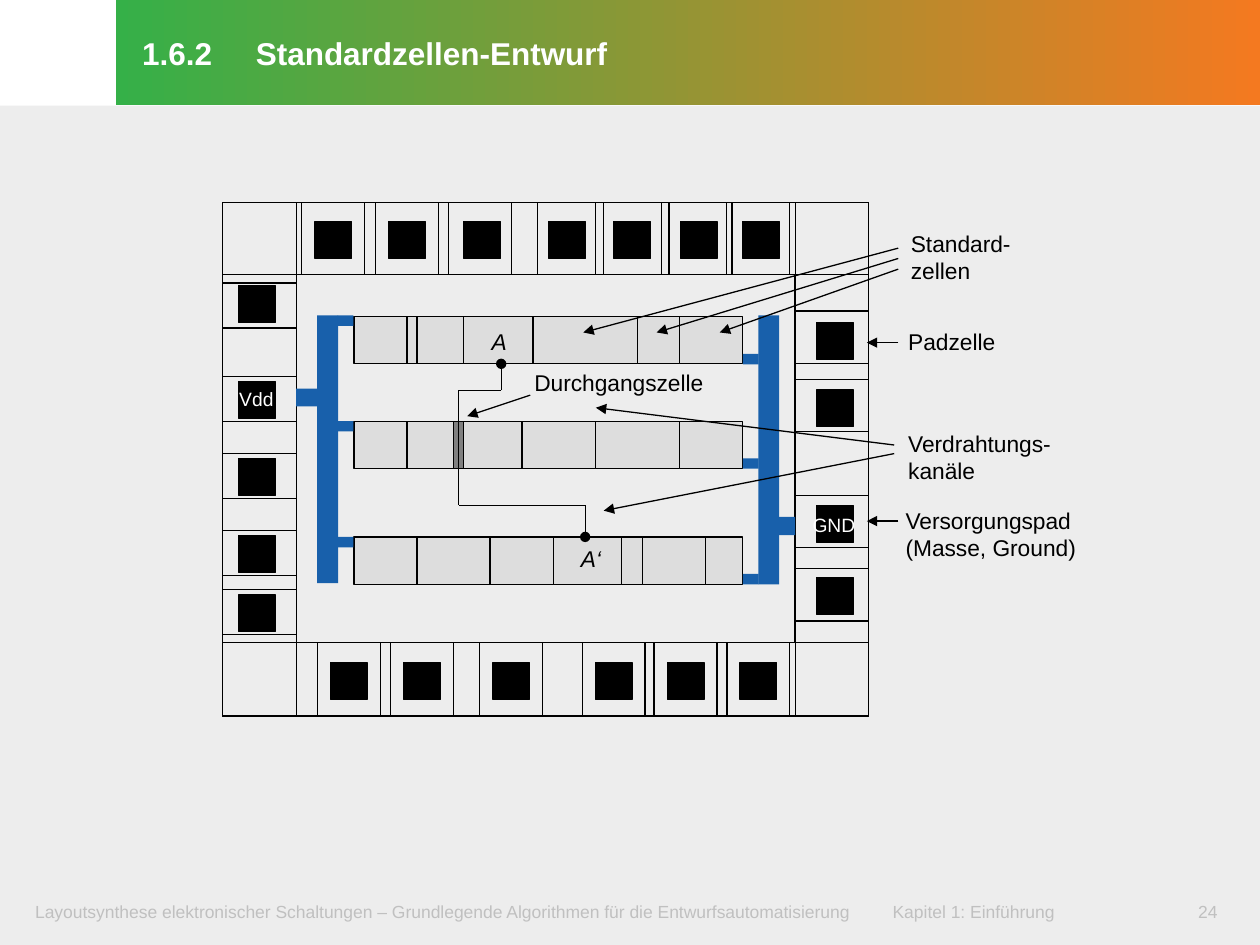
from itertools import pairwise

from lxml import etree
from pptx import Presentation
from pptx.dml.color import RGBColor
from pptx.enum import shapes, text
from pptx.oxml import ns
from pptx.util import Pt

BLACK = RGBColor(0, 0, 0)
WHITE = RGBColor(255, 255, 255)
PAPER = RGBColor(0xED, 0xED, 0xED)
CELL = RGBColor(0xDD, 0xDD, 0xDD)
FEEDTHROUGH = RGBColor(0x80, 0x80, 0x80)
POWER = RGBColor(0x18, 0x60, 0xAB)
FOOTER = RGBColor(0xC0, 0xC0, 0xC0)
GREEN = RGBColor(0x35, 0xB0, 0x48)
ORANGE = RGBColor(0xF4, 0x79, 0x20)

prs = Presentation()
prs.slide_width, prs.slide_height = Pt(720), Pt(540)
slide = prs.slides.add_slide(prs.slide_layouts[5])
tree = slide.shapes


def box(left, top, width, height, fill=None, outline=BLACK):
    rect = tree.add_shape(shapes.MSO_SHAPE.RECTANGLE,
                          Pt(left), Pt(top), Pt(width), Pt(height))
    rect.shadow.inherit = False
    if fill is None:
        rect.fill.background()
    else:
        rect.fill.solid()
        rect.fill.fore_color.rgb = fill
    if outline is None:
        rect.line.fill.background()
    else:
        rect.line.color.rgb = outline
        rect.line.width = Pt(0.75)
    return rect


def write(shape, content, size=13, color=BLACK, bold=False, italic=False,
          insets=(8, 3.6, 8, 3.6), align=text.PP_ALIGN.LEFT,
          anchor=text.MSO_ANCHOR.TOP, tab=None, spacing=None):
    """Fill a shape with one formatted paragraph; tab is a stop in points."""
    frame = shape.text_frame
    frame.word_wrap = True
    frame.auto_size = text.MSO_AUTO_SIZE.NONE
    frame.vertical_anchor = anchor
    (frame.margin_left, frame.margin_top,
     frame.margin_right, frame.margin_bottom) = map(Pt, insets)
    paragraph = frame.paragraphs[0]
    paragraph.text = content
    paragraph.alignment = align
    if spacing:
        paragraph.line_spacing = Pt(spacing)
    if tab:
        stops = etree.SubElement(paragraph._p.get_or_add_pPr(), ns.qn("a:tabLst"))
        etree.SubElement(stops, ns.qn("a:tab"), pos=str(Pt(tab)), algn="l")
    for run in paragraph.runs:
        font = run.font
        font.name, font.size = "Arial", Pt(size)
        font.bold, font.italic = bold, italic
        font.color.rgb = color


# Title band, background and footer
title = tree.title
title.left, title.top, title.width, title.height = Pt(66.2), Pt(0), Pt(653.8), Pt(60.3)
title.fill.gradient()
title.fill.gradient_angle = 0
for stop, color in zip(title.fill.gradient_stops, (GREEN, ORANGE)):
    stop.color.rgb = color
write(title, "1.6.2\tStandardzellen-Entwurf", size=18, color=WHITE, bold=True,
      insets=(15, 3.6, 7.2, 5), anchor=text.MSO_ANCHOR.MIDDLE, tab=65, spacing=23.5)

box(0, 60.3, 720, 479.7, PAPER, None)
for content, left, width, align in (
    ("Layoutsynthese elektronischer Schaltungen – Grundlegende Algorithmen "
     "für die Entwurfsautomatisierung\tKapitel 1: Einführung",
     11.5, 637, text.PP_ALIGN.LEFT),
    ("24", 669, 42.5, text.PP_ALIGN.CENTER),
):
    note = tree.add_textbox(Pt(left), Pt(510.5), Pt(width), Pt(23))
    write(note, content, size=10, color=FOOTER, insets=(8.6, 4.3, 8.6, 4.3),
          align=align, tab=490)

# Rows of standard cells, given by their vertical edges
CELL_ROWS = {
    180.8: (202.3, 232.6, 238.3, 265, 304.6, 364.3, 388.3, 424.3),
    240.9: (202.3, 232.6, 259.2, 265, 298.3, 340.4, 388.3, 424.3),
    306.9: (202.3, 238.3, 280.1, 316.2, 355, 367, 403, 424.3),
}
for top, edges in CELL_ROWS.items():
    for left, right in pairwise(edges):
        is_feedthrough = (top, left) == (240.9, 259.2)
        box(left, top, right - left, 27, FEEDTHROUGH if is_feedthrough else CELL)

# Chip outline, core and corners
LEFT, TOP, RIGHT, BOTTOM = 127.2, 115.9, 496.2, 409.2
CORE_LEFT, CORE_TOP, CORE_RIGHT, CORE_BOTTOM = 169.3, 156.9, 454.4, 367.1
box(CORE_LEFT, CORE_TOP, CORE_RIGHT - CORE_LEFT, CORE_BOTTOM - CORE_TOP)
box(LEFT, TOP, RIGHT - LEFT, BOTTOM - TOP)
for left, right in ((LEFT, CORE_LEFT), (CORE_RIGHT, RIGHT)):
    for top, bottom in ((TOP, CORE_TOP), (CORE_BOTTOM, BOTTOM)):
        box(left, top, right - left, bottom - top)

# Pad cells: frame (left, top, width, height) and pad corner (left, top)
pad_cells = [((left, TOP, width, CORE_TOP - TOP), (pad, 126.7))
             for left, width, pad in (
                 (172.2, 36, 180), (214.5, 36, 222), (256.3, 36, 265),
                 (307.2, 33, 313.5), (344.9, 33, 350.7),
                 (382.4, 33, 388.7), (418.3, 33, 424.3))]
pad_cells += [((left, CORE_BOTTOM, 36, BOTTOM - CORE_BOTTOM), (left + 7.5, 378.7))
              for left in (181.3, 223.2, 274.2, 332.7, 373.8, 415.4)]
pad_cells += [((LEFT, top, CORE_LEFT - LEFT, 25.8), (136.3, pad))
              for top, pad in ((161.7, 163.2), (215.2, 218), (259.2, 262),
                               (303, 306), (337, 340))]
pad_cells += [((CORE_RIGHT, top, RIGHT - CORE_RIGHT, 30), (466.7, pad))
              for top, pad in ((177.8, 184.3), (216.8, 222.8),
                               (283, 289), (324.9, 330))]
for frame, (pad_left, pad_top) in pad_cells:
    box(*frame)
    box(pad_left, pad_top, 21, 21, BLACK)

# Supply rails and their branches
for rail in (
    (433.3, 180.2, 12, 153.8), (181.2, 180.2, 12, 153),
    (169.3, 222, 13.5, 10.3), (440.8, 295.4, 13.6, 10.5),
    *((424.5, top, 9, 6) for top in (202.2, 261.9, 328)),
    *((193, top, 9, 6) for top in (180.2, 240.6, 306.8)),
):
    box(*rail, fill=POWER, outline=None)

# Labels
for content, left, top, width, height, style in (
    ("A", 273, 183.5, 30, 23, {"italic": True}),
    ("A‘", 324, 307.5, 33, 23, {"italic": True}),
    ("Durchgangszelle", 297.3, 207.4, 120, 23, {}),
    ("Standard-\nzellen", 512.5, 127.5, 78.5, 38, {}),
    ("Padzelle", 511, 183.8, 78.5, 23, {}),
    ("Verdrahtungs-\nkanäle", 511, 241.8, 138, 38, {}),
    ("Versorgungspad\n(Masse, Ground)", 509.5, 286, 124, 38, {}),
    ("GND", 456.3, 290, 44.6, 20, {"size": 11, "color": WHITE}),
    ("Vdd", 128.7, 218, 44.6, 20, {"size": 11, "color": WHITE}),
):
    label = tree.add_textbox(Pt(left), Pt(top), Pt(width), Pt(height))
    write(label, content, **style)

# Net from A to A‘ and the pointers: x1, y1, x2, y2, head, tail
net = ((286.4, 207.9), (286.4, 223), (262.2, 223), (262.2, 288.8),
       (334.4, 288.8), (334.4, 306.8))
lines = [(*start, *end, None, None) for start, end in pairwise(net)]
lines[0] = (*lines[0][:4], "oval", None)
lines[-1] = (*lines[-1][:4], None, "oval")
lines += [(*ends, None, "triangle") for ends in (
    (303, 225.8, 267, 237.8),
    (513.3, 141.8, 333.3, 190), (513.3, 147.7, 375.2, 190), (513.3, 153.8, 411.3, 190),
    (513.3, 195.8, 495.3, 195.8), (513.3, 297.8, 495.3, 297.8),
    (511, 254.3, 340.5, 233), (511, 259.2, 345, 291.8),
)]
for x1, y1, x2, y2, head, tail in lines:
    line = tree.add_connector(shapes.MSO_CONNECTOR.STRAIGHT,
                              Pt(x1), Pt(y1), Pt(x2), Pt(y2))
    line.line.color.rgb = BLACK
    line.line.width = Pt(0.75)
    for tag, kind in (("a:headEnd", head), ("a:tailEnd", tail)):
        if kind:
            etree.SubElement(line.line._get_or_add_ln(), ns.qn(tag), type=kind)
    etree.SubElement(line._element.spPr, ns.qn("a:effectLst"))

prs.save("out.pptx")
